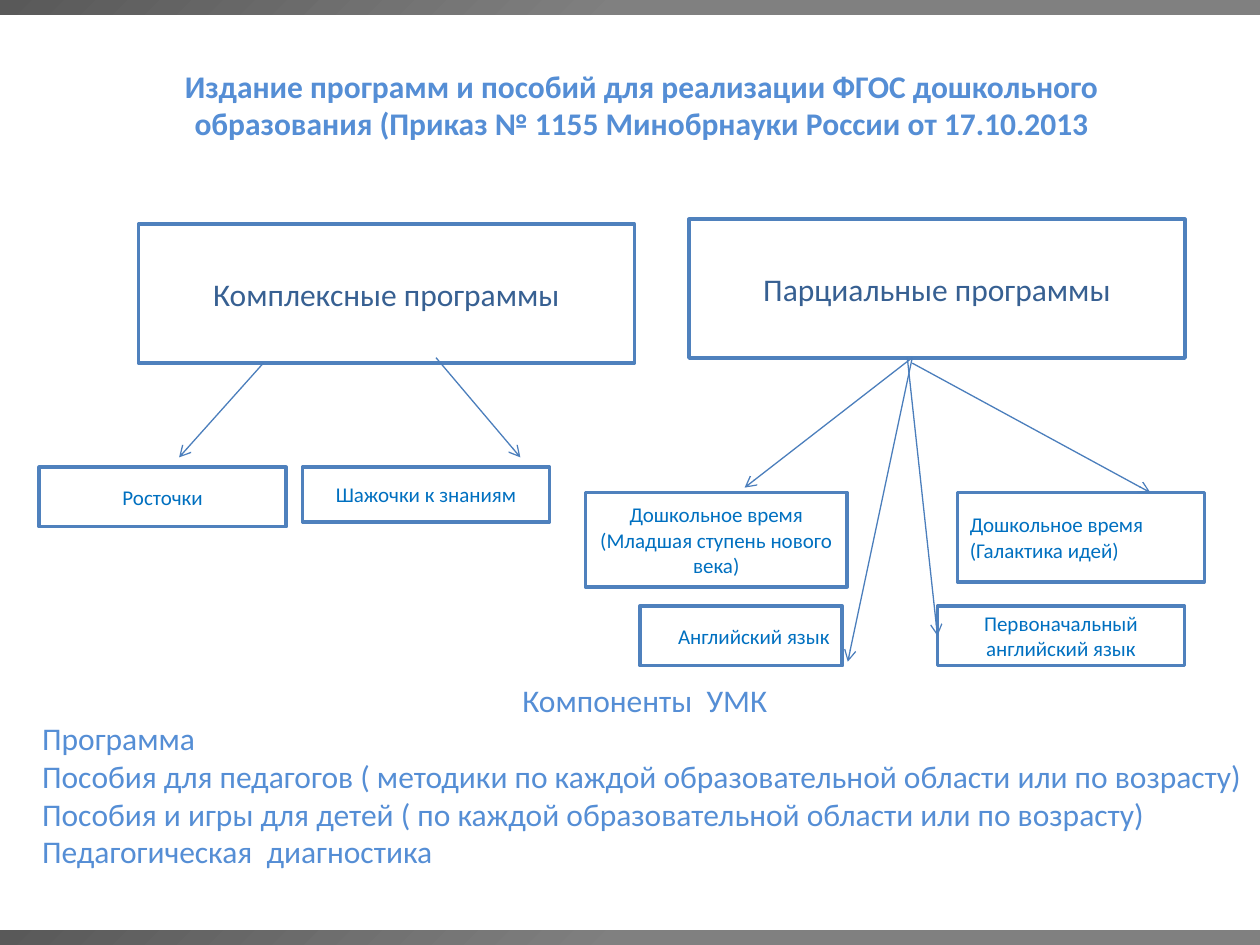
from lxml import etree
from pptx import Presentation
from pptx.dml.color import RGBColor
from pptx.enum.shapes import MSO_CONNECTOR, MSO_SHAPE
from pptx.enum.text import MSO_ANCHOR, PP_ALIGN as Align
from pptx.oxml.ns import qn
from pptx.util import Cm, Pt

LIGHT_BLUE = "558ED5"
DARK_BLUE = "376092"
BRIGHT_BLUE = "0070C0"


def color(hex_value):
    return RGBColor.from_string(hex_value)


def write(paragraph, text, size, ink, align, bold=False):
    paragraph.alignment = align
    run = paragraph.add_run()
    run.text = text
    run.font.name = "Calibri"
    run.font.size = Pt(size)
    run.font.bold = bold
    run.font.color.rgb = color(ink)


prs = Presentation()
prs.slide_width, prs.slide_height = Cm(25.4), Cm(19.05)
slide = prs.slides.add_slide(prs.slide_layouts[6])
shapes = slide.shapes

# Grey bands along the bottom and top edges
for top in (18.75, 0):
    band = shapes.add_shape(MSO_SHAPE.RECTANGLE, 0, Cm(top), Cm(25.4), Cm(0.3))
    band.shadow.inherit = False
    band.line.fill.background()
    band.fill.gradient()
    band.fill.gradient_angle = 315
    for stop, (position, shade) in zip(band.fill.gradient_stops,
                                       ((0, "595959"), (0.5, "808080"))):
        stop.position = position
        stop.color.rgb = color(shade)

# Heading
heading = shapes.add_textbox(Cm(2.39), Cm(1.22), Cm(21.1), Cm(1.8)).text_frame
heading.word_wrap = True
write(heading.paragraphs[0],
      "Издание программ и пособий для реализации ФГОС дошкольного "
      "образования (Приказ № 1155 Минобрнауки России от 17.10.2013",
      18, LIGHT_BLUE, Align.CENTER, bold=True)

# Programme groups and the programmes below them: left, top, width, height
programmes = [
    ("Комплексные программы", 2.79, 4.52, 10, 2.8, 18, DARK_BLUE, Align.CENTER),
    ("Парциальные программы", 13.89, 4.42, 10, 2.8, 18, DARK_BLUE, Align.CENTER),
    ("Росточки", 0.79, 9.42, 4.98, 1.2, 12, BRIGHT_BLUE, Align.CENTER),
    ("Шажочки к знаниям", 6.1, 9.42, 4.98, 1.1, 12, BRIGHT_BLUE, Align.CENTER),
    ("Первоначальный английский язык", 18.9, 12.22, 4.98, 1.2, 12, BRIGHT_BLUE, Align.CENTER),
    ("Английский язык", 12.9, 12.22, 4.08, 1.2, 12, BRIGHT_BLUE, Align.RIGHT),
    ("Дошкольное время (Галактика идей)", 19.3, 9.93, 4.98, 1.8, 12, BRIGHT_BLUE, Align.LEFT),
    ("Дошкольное время (Младшая ступень нового века)", 11.8, 9.93, 5.28, 1.9, 12,
     BRIGHT_BLUE, Align.CENTER),
]
boxes = {}
for name, left, top, width, height, size, ink, align in programmes:
    box = shapes.add_shape(MSO_SHAPE.RECTANGLE, Cm(left), Cm(top), Cm(width), Cm(height))
    box.shadow.inherit = False
    box.fill.solid()
    box.fill.fore_color.rgb = color("FFFFFF")
    box.line.color.rgb = color("4F81BD")
    box.line.width = Pt(2)
    box.text_frame.word_wrap = True
    box.text_frame.vertical_anchor = MSO_ANCHOR.MIDDLE
    write(box.text_frame.paragraphs[0], name, size, ink, align)
    boxes[name] = box

# Components of the teaching kit
components = shapes.add_textbox(Cm(0.6), Cm(13.61), Cm(24.8), Cm(4.12)).text_frame
components.word_wrap = True
write(components.paragraphs[0], "Компоненты  УМК", 18, LIGHT_BLUE, Align.CENTER)
for component in (
    "Программа",
    "Пособия для педагогов ( методики по каждой образовательной области или по возрасту)",
    "Пособия и игры для детей ( по каждой образовательной области или по возрасту)",
    "Педагогическая  диагностика",
):
    write(components.add_paragraph(), component, 18, LIGHT_BLUE, Align.LEFT)

# Arrows from the groups to their programmes: start x, y, end x, y, joined box
arrows = [
    (5.31, 7.32, 3.61, 9.22, None),
    (8.79, 7.21, 10.49, 9.22, None),
    (18.39, 7.21, 15.01, 9.83, None),
    (18.39, 7.32, 23.19, 9.93, None),
    (18.39, 7.21, 17.09, 13.34, None),
    (18.29, 7.21, 18.9, 12.82, "Первоначальный английский язык"),
]
for x1, y1, x2, y2, target in arrows:
    arrow = shapes.add_connector(MSO_CONNECTOR.STRAIGHT, Cm(x1), Cm(y1), Cm(x2), Cm(y2))
    if target:
        arrow.end_connect(boxes[target], 1)
    arrow.line.color.rgb = color("4B7EBC")
    arrow.line.width = Pt(0.75)
    etree.SubElement(arrow.line._get_or_add_ln(), qn("a:tailEnd"), type="arrow")
    etree.SubElement(arrow._element.spPr, qn("a:effectLst"))

prs.save("out.pptx")
